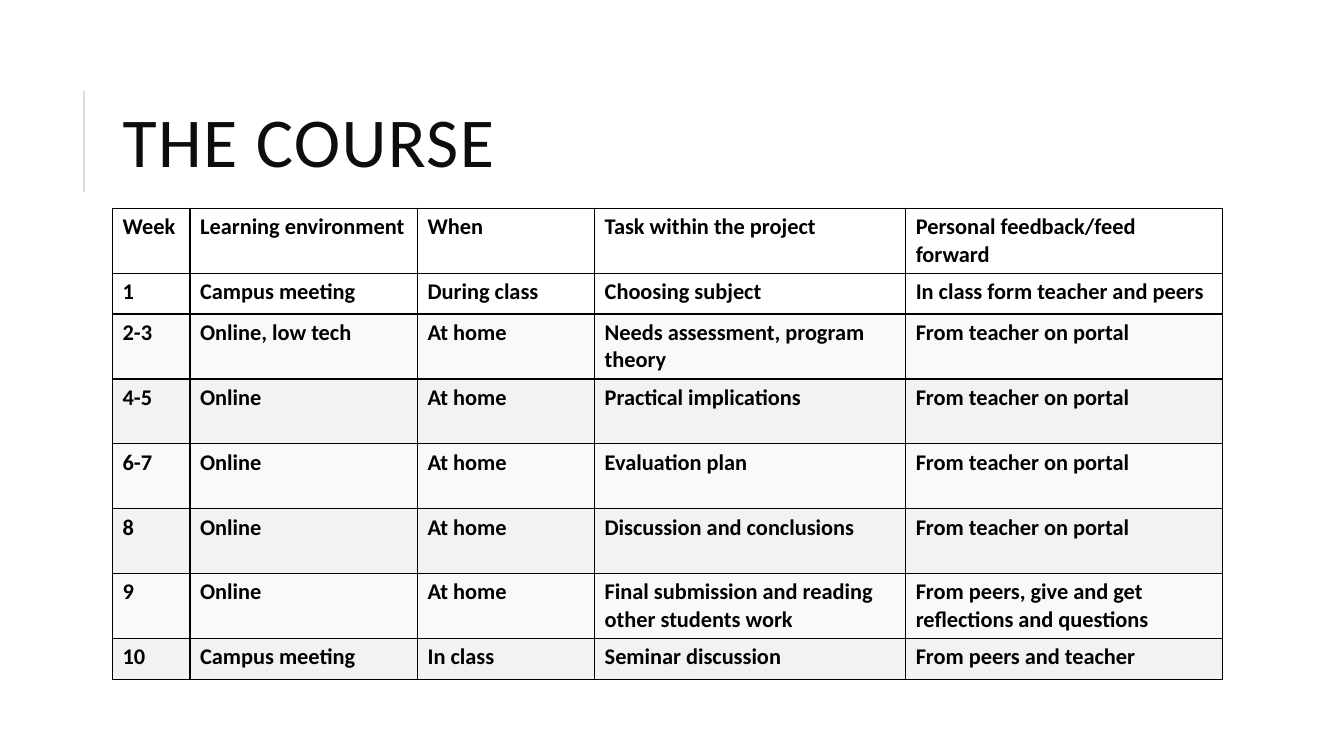
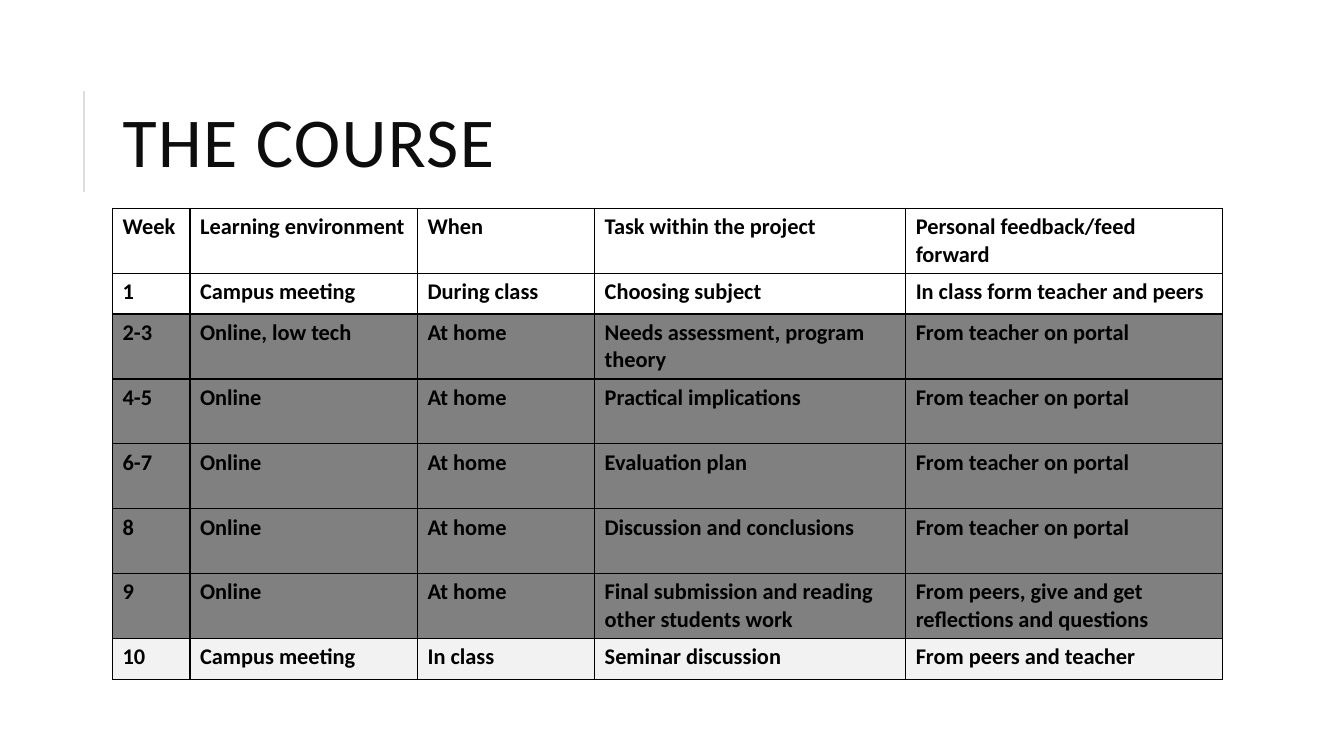
import pptx
import pptx.dml.color
import pptx.enum.shapes
import pptx.enum.text
import pptx.oxml
import pptx.oxml.ns
import pptx.util

Pt = pptx.util.Pt
RGBColor = pptx.dml.color.RGBColor

FONT = "Calibri"
BLACK = RGBColor(0x00, 0x00, 0x00)
TITLE_INK = RGBColor(0x0D, 0x0D, 0x0D)
RULE_GREY = RGBColor(0xDD, 0xDD, 0xDD)
WHITE = RGBColor(0xFF, 0xFF, 0xFF)
PALE = RGBColor(0xF9, 0xF9, 0xF9)
LIGHT = RGBColor(0xF2, 0xF2, 0xF2)
DARK = RGBColor(0x80, 0x80, 0x80)

# Boxes: left, top, width, height in points
TITLE_BOX = (80.6, 46, 765.4, 118)
RULE_BOX = (60, 65, 0, 72)
TABLE_LEFT, TABLE_TOP = 80.4, 148.8
COLUMN_WIDTHS = (55.4, 162.5, 126.5, 222.2, 226.1)
SHORT_ROW, TALL_ROW = 29.2, 46.35

COURSE = (
    ("Week", "Learning environment", "When", "Task within the project",
     "Personal feedback/feed forward"),
    ("1", "Campus meeting", "During class", "Choosing subject",
     "In class form teacher and peers"),
    ("2-3", "Online, low tech", "At home", "Needs assessment, program theory",
     "From teacher on portal"),
    ("4-5", "Online", "At home", "Practical implications",
     "From teacher on portal"),
    ("6-7", "Online", "At home", "Evaluation plan", "From teacher on portal"),
    ("8", "Online", "At home", "Discussion and conclusions",
     "From teacher on portal"),
    ("9", "Online", "At home",
     "Final submission and reading other students work",
     "From peers, give and get reflections and questions"),
    ("10", "Campus meeting", "In class", "Seminar discussion",
     "From peers and teacher"),
)
SHORT_WEEKS = ("1", "10")
BANDED_FILLS = (WHITE, WHITE) + (PALE, LIGHT) * 3
HOME_WEEKS_FILLS = (WHITE, WHITE) + (DARK,) * 5 + (LIGHT,)


def write_text(frame, text, size, color, bold=False, line_spacing=None,
               letter_spacing=None):
    para = frame.paragraphs[0]
    para.line_spacing = line_spacing
    span = para.add_run()
    span.text = text
    span.font.name = FONT
    span.font.size = Pt(size)
    span.font.bold = bold
    span.font.color.rgb = color
    if letter_spacing:
        span.font._element.set("spc", str(letter_spacing * 100))


def add_title(page, text, box):
    frame = page.shapes.add_textbox(*map(Pt, box)).text_frame
    frame.word_wrap = True
    frame.vertical_anchor = pptx.enum.text.MSO_ANCHOR.MIDDLE
    write_text(frame, text, size=50, color=TITLE_INK, line_spacing=0.8,
               letter_spacing=1)


def add_rule(page, box):
    left, top, width, height = box
    rule = page.shapes.add_connector(
        pptx.enum.shapes.MSO_CONNECTOR.STRAIGHT,
        Pt(left), Pt(top + height), Pt(left + width), Pt(top))
    rule.line.color.rgb = RULE_GREY
    rule.line.width = Pt(1.5)
    rule._element.spPr.append(pptx.oxml.parse_xml(
        f'<a:effectLst {pptx.oxml.ns.nsdecls("a")}/>'))


def set_borders(cell, color, width):
    properties = cell._tc.get_or_add_tcPr()
    for side in ("lnL", "lnR", "lnT", "lnB"):
        properties.append(pptx.oxml.parse_xml(
            f'<a:{side} {pptx.oxml.ns.nsdecls("a")} w="{Pt(width)}">'
            f'<a:solidFill><a:srgbClr val="{color}"/></a:solidFill>'
            f'</a:{side}>'))


def add_course_table(page, left, top, row_fills):
    heights = [SHORT_ROW if row[0] in SHORT_WEEKS else TALL_ROW
               for row in COURSE]
    table = page.shapes.add_table(
        len(COURSE), len(COLUMN_WIDTHS), Pt(left), Pt(top),
        Pt(sum(COLUMN_WIDTHS)), Pt(sum(heights))).table
    table.first_row = False
    table.horz_banding = False
    for column, width in zip(table.columns, COLUMN_WIDTHS):
        column.width = Pt(width)
    for row, height, texts, fill in zip(table.rows, heights, COURSE, row_fills):
        row.height = Pt(height)
        for cell, text in zip(row.cells, texts):
            set_borders(cell, BLACK, 1)
            cell.fill.solid()
            cell.fill.fore_color.rgb = fill
            write_text(cell.text_frame, text, size=16, color=BLACK, bold=True)


def add_course_page(deck, row_fills):
    page = deck.slides.add_slide(deck.slide_layouts[6])
    page.background.fill.solid()
    page.background.fill.fore_color.rgb = WHITE
    add_rule(page, RULE_BOX)
    add_title(page, "THE COURSE", TITLE_BOX)
    add_course_table(page, TABLE_LEFT, TABLE_TOP, row_fills)


def main():
    deck = pptx.Presentation()
    deck.slide_width, deck.slide_height = Pt(960), Pt(540)
    for row_fills in (BANDED_FILLS, HOME_WEEKS_FILLS):
        add_course_page(deck, row_fills)
    deck.save("out.pptx")


if __name__ == "__main__":
    main()
